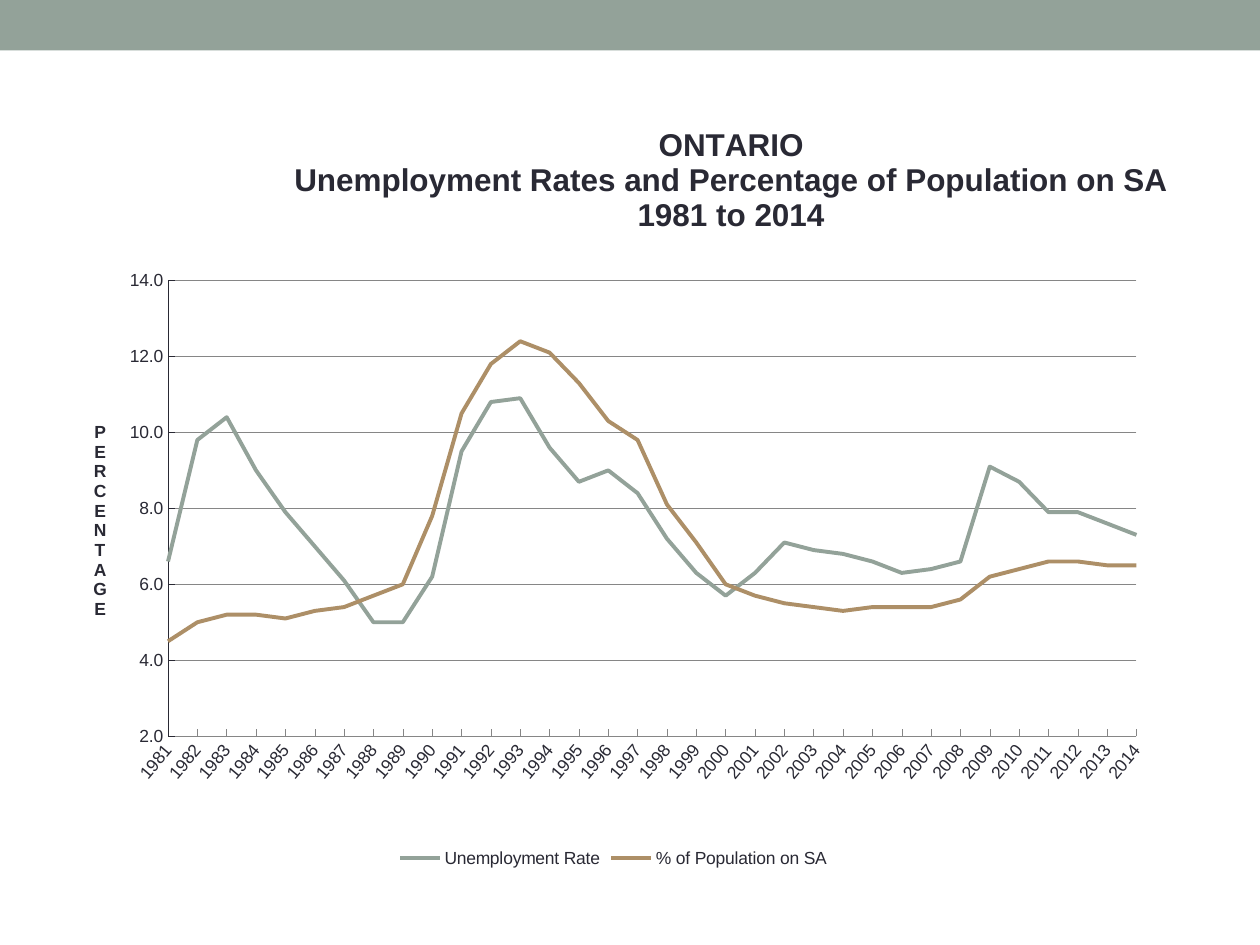
from pptx import Presentation
from pptx.chart.data import CategoryChartData
from pptx.dml.color import RGBColor
from pptx.enum.chart import XL_CHART_TYPE as ChartType
from pptx.enum.chart import XL_LEGEND_POSITION as LegendPosition
from pptx.enum.chart import XL_TICK_MARK as TickMark
from pptx.enum.shapes import MSO_SHAPE as Preset
from pptx.enum.text import PP_ALIGN as Align
from pptx.oxml import parse_xml
from pptx.oxml.ns import nsdecls, qn
from pptx.util import Inches, Pt

SAGE = RGBColor(0x93, 0xA2, 0x99)
TAN = RGBColor(0xAD, 0x8F, 0x67)
INK = RGBColor(0x29, 0x29, 0x34)
GREY = RGBColor(0x86, 0x86, 0x86)
FONT = "Arial"

YEARS = [str(year) for year in range(1981, 2015)]
UNEMPLOYMENT = [6.6, 9.8, 10.4, 9, 7.9, 7, 6.1, 5, 5, 6.2, 9.5, 10.8,
                10.9, 9.6, 8.7, 9, 8.4, 7.2, 6.3, 5.7, 6.3, 7.1, 6.9, 6.8,
                6.6, 6.3, 6.4, 6.6, 9.1, 8.7, 7.9, 7.9, 7.6, 7.3]
ASSISTANCE = [4.5, 5, 5.2, 5.2, 5.1, 5.3, 5.4, 5.7, 6, 7.8, 10.5, 11.8,
              12.4, 12.1, 11.3, 10.3, 9.8, 8.1, 7.1, 6, 5.7, 5.5, 5.4, 5.3,
              5.4, 5.4, 5.4, 5.6, 6.2, 6.4, 6.6, 6.6, 6.5, 6.5]
SERIES = [("Unemployment Rate", UNEMPLOYMENT, SAGE),
          ("% of Population on SA", ASSISTANCE, TAN)]
TITLE = ["ONTARIO",
         "Unemployment Rates and Percentage of Population on SA",
         "1981 to 2014"]


def style_font(font, size=10, bold=False, color=INK):
    font.name = FONT
    font.size = Pt(size)
    font.bold = bold
    font.color.rgb = color


def write_text(frame, lines, align=Align.CENTER, **style):
    for index, line in enumerate(lines):
        paragraph = frame.add_paragraph() if index else frame.paragraphs[0]
        paragraph.alignment = align
        run = paragraph.add_run()
        run.text = line
        style_font(run.font, **style)


def style_line(line, color, width):
    line.color.rgb = color
    line.width = Pt(width)


def place_part(part, index, x, y, w=None, h=None):
    for old_layout in part.findall(qn("c:layout")):
        part.remove(old_layout)
    settings = '<c:layoutTarget val="inner"/>' if w else ""
    settings += '<c:xMode val="edge"/><c:yMode val="edge"/>'
    for tag, value in zip("xywh", (x, y, w, h)):
        if value is not None:
            settings += f'<c:{tag} val="{value}"/>'
    part.insert(index, parse_xml(
        f'<c:layout {nsdecls("c")}><c:manualLayout>{settings}'
        '</c:manualLayout></c:layout>'))


def start_lines_on_axis(value_axis):
    for old_setting in value_axis.findall(qn("c:crossBetween")):
        value_axis.remove(old_setting)
    value_axis.find(qn("c:crosses")).addnext(
        parse_xml(f'<c:crossBetween {nsdecls("c")} val="midCat"/>'))


def add_band(slide, left, top, width, height):
    band = slide.shapes.add_shape(Preset.RECTANGLE, left, top, width, height)
    band.shadow.inherit = False
    band.fill.solid()
    band.fill.fore_color.rgb = SAGE
    band.line.fill.background()


def format_years(axis):
    axis.major_tick_mark = TickMark.INSIDE
    axis.has_major_gridlines = False
    style_line(axis.format.line, GREY, 0.25)
    style_font(axis.tick_labels.font)
    label_body = axis.tick_labels.font._element.getparent().getparent().getparent()
    label_body.find(qn("a:bodyPr")).set("rot", "-3000000")


def format_percentages(axis):
    axis.minimum_scale, axis.maximum_scale, axis.major_unit = 2, 14, 2
    axis.major_tick_mark = TickMark.INSIDE
    axis.has_major_gridlines = True
    style_line(axis.major_gridlines.format.line, GREY, 0.25)
    style_line(axis.format.line, INK, 0.25)
    axis.tick_labels.number_format = "0.0"
    axis.tick_labels.number_format_is_linked = False
    style_font(axis.tick_labels.font)
    heading = axis.axis_title.text_frame
    write_text(heading, ["PERCENTAGE"], bold=True)


def add_rates_chart(slide, left, top, width, height):
    rates = CategoryChartData(number_format="0.0")
    rates.categories = YEARS
    for name, values, _ in SERIES:
        rates.add_series(name, values)
    chart = slide.shapes.add_chart(
        ChartType.LINE, left, top, width, height, rates).chart
    style_font(chart.font)

    chart.has_title = True
    write_text(chart.chart_title.text_frame, TITLE, size=18, bold=True)
    chart.has_legend = True
    chart.legend.position = LegendPosition.BOTTOM
    chart.legend.include_in_layout = False
    style_font(chart.legend.font)

    chart.plots[0].vary_by_categories = False
    for series, (_, _, color) in zip(chart.plots[0].series, SERIES):
        series.smooth = False
        style_line(series.format.line, color, 2.25)

    format_years(chart.category_axis)
    format_percentages(chart.value_axis)

    root = chart.element
    title = root.find(".//" + qn("c:chart") + "/" + qn("c:title"))
    plot_area = root.find(".//" + qn("c:plotArea"))
    value_axis = plot_area.find(qn("c:valAx"))
    axis_title = value_axis.find(qn("c:title"))
    place_part(title, 1, 0.21, 0.01)
    place_part(axis_title, 1, 0.03, 0.4)
    place_part(plot_area, 0, 0.1, 0.22, 0.87, 0.6)
    axis_body = axis_title.find(".//" + qn("a:bodyPr"))
    axis_body.set("rot", "0")
    axis_body.set("vert", "wordArtVert")
    start_lines_on_axis(value_axis)


def main():
    deck = Presentation()
    deck.slide_width, deck.slide_height = Inches(10), Inches(7.5)
    slide = deck.slides.add_slide(deck.slide_layouts[6])
    add_band(slide, Inches(0), Inches(0), Inches(10), Inches(0.4))
    add_rates_chart(slide, Inches(0.45), Inches(0.9), Inches(8.85), Inches(6.03))
    deck.save("out.pptx")


if __name__ == "__main__":
    main()
